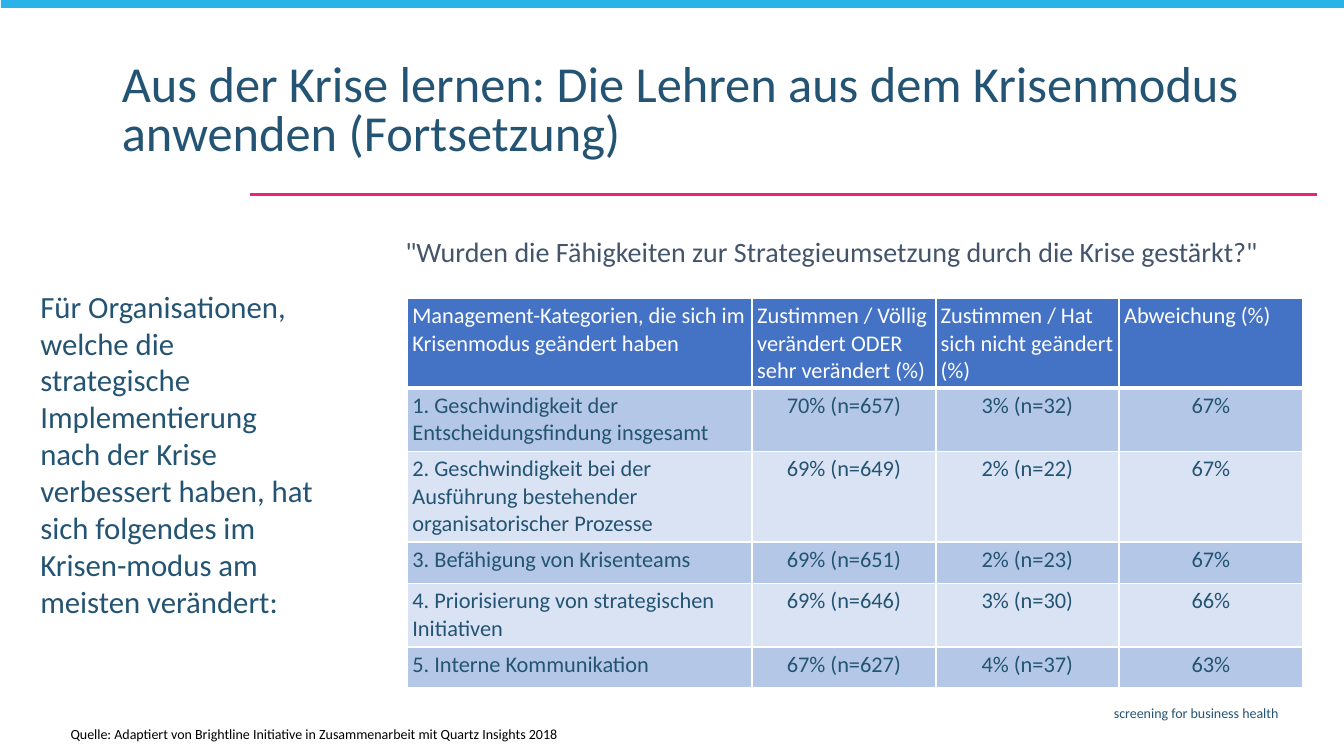
from lxml import etree
from pptx import Presentation
from pptx.dml.color import RGBColor
from pptx.enum.shapes import MSO_CONNECTOR, MSO_SHAPE
from pptx.enum.text import MSO_ANCHOR, PP_ALIGN
from pptx.oxml.ns import qn
from pptx.util import Pt

LEFT, MID, RIGHT = PP_ALIGN.LEFT, PP_ALIGN.CENTER, PP_ALIGN.RIGHT
TOP, LOW = MSO_ANCHOR.TOP, MSO_ANCHOR.BOTTOM
RECT, LINE = MSO_SHAPE.RECTANGLE, MSO_CONNECTOR.STRAIGHT

# Content
FONT = "Calibri"
HEX = {"navy": "245473", "slate": "44546A", "black": "000000",
       "white": "FFFFFF", "pink": "EC2179", "sky": "29B3E8",
       "head": "4472C4", "odd": "B4C7E7", "even": "DAE3F3"}

# text, box, size, colour, align, anchor, inset, line spacing
TEXTS = [
    ("Aus der Krise lernen: Die Lehren aus dem Krisenmodus anwenden "
     "(Fortsetzung)",
     (111, 58, 1192, 111), 36, "navy", LEFT, TOP, (10, 5), 0.81),
    ('"Wurden die Fähigkeiten zur Strategieumsetzung durch die Krise '
     'gestärkt?"',
     (400, 231, 897, 37), 20, "slate", LEFT, TOP, (2, 2), 1.0),
    ("Für Organisationen, welche die strategische Implementierung nach der "
     "Krise verbessert haben, hat sich folgendes im Krisen-modus am meisten "
     "verändert:",
     (36, 281, 288, 342), 22, "navy", LEFT, TOP, (4, 4), 1.0),
    ("screening for business health",
     (370, 694, 903, 25), 10, "navy", RIGHT, TOP, (5, 5), 1.0),
    ("Quelle: Adaptiert von Brightline Initiative in Zusammenarbeit mit "
     "Quartz Insights 2018",
     (65, 716, 596, 25), 10, "black", LEFT, LOW, (5, 5), 1.0),
]

ROWS = [
    ("Management-Kategorien, die sich im Krisenmodus geändert haben",
     "Zustimmen / Völlig verändert ODER sehr verändert (%)",
     "Zustimmen / Hat sich nicht geändert (%)", "Abweichung (%)"),
    ("1. Geschwindigkeit der Entscheidungsfindung insgesamt",
     "70% (n=657)", "3% (n=32)", "67%"),
    ("2. Geschwindigkeit bei der Ausführung bestehender organisatorischer "
     "Prozesse", "69% (n=649)", "2% (n=22)", "67%"),
    ("3. Befähigung von Krisenteams", "69% (n=651)", "2% (n=23)", "67%"),
    ("4. Priorisierung von strategischen Initiativen",
     "69% (n=646)", "3% (n=30)", "66%"),
    ("5. Interne Kommunikation", "67% (n=627)", "4% (n=37)", "63%"),
]
WIDTHS = (342, 182, 182, 182)
HEIGHTS = (89, 63, 90, 41, 63, 41)
GRID = (404, 296)


# Helpers
def px(n):
    return n * 9144


def rgb(name):
    return RGBColor.from_string(HEX[name])


def style(para, size, hue, align):
    para.alignment = align
    font = para.font
    font.name, font.size, font.bold = FONT, Pt(size), False
    font.color.rgb = rgb(hue)


def edge(cell, side, width):
    props = cell._tc.get_or_add_tcPr()
    line = etree.SubElement(props, qn("a:ln" + side), w=str(Pt(width)))
    fill = etree.SubElement(line, qn("a:solidFill"))
    etree.SubElement(fill, qn("a:srgbClr"), val=HEX["white"])


deck = Presentation()
deck.slide_width, deck.slide_height = px(1333), px(750)
slide = deck.slides.add_slide(deck.slide_layouts[6])
shapes = slide.shapes

# Top bar and title rule
bar = shapes.add_shape(RECT, px(1), px(-2), px(1332), px(10))
bar.shadow.inherit = False
bar.fill.solid()
bar.fill.fore_color.rgb = rgb("sky")
bar.line.fill.background()

rule = shapes.add_connector(LINE, px(248), px(193), px(1306), px(193))
rule.line.color.rgb = rgb("pink")
rule.line.width = Pt(1.5)
etree.SubElement(rule._element.spPr, qn("a:effectLst"))

# Text boxes
for text, box, size, hue, align, anchor, inset, space in TEXTS:
    frame = shapes.add_textbox(*map(px, box)).text_frame
    frame.word_wrap = True
    frame.vertical_anchor = anchor
    frame.margin_left = frame.margin_right = px(inset[0])
    frame.margin_top = frame.margin_bottom = px(inset[1])
    para = frame.paragraphs[0]
    para.text = text
    para.line_spacing = space
    style(para, size, hue, align)

# Table
size = (sum(WIDTHS), sum(HEIGHTS))
table = shapes.add_table(len(ROWS), len(WIDTHS),
                         *map(px, GRID + size)).table
table.horz_banding = False
for col, width in zip(table.columns, WIDTHS):
    col.width = px(width)
for r, row in enumerate(ROWS):
    table.rows[r].height = px(HEIGHTS[r])
    shade = "head" if r == 0 else "odd" if r % 2 else "even"
    for c, text in enumerate(row):
        cell = table.cell(r, c)
        cell.margin_left = cell.margin_right = px(5)
        cell.margin_top = cell.margin_bottom = px(4)
        for side in "LRTB":
            thick = (r, side) in ((0, "B"), (1, "T"))
            edge(cell, side, 3 if thick else 1.5)
        cell.fill.solid()
        cell.fill.fore_color.rgb = rgb(shade)
        para = cell.text_frame.paragraphs[0]
        para.text = text
        style(para, 16, "navy" if r else "white", MID if r and c else LEFT)

deck.save("out.pptx")
